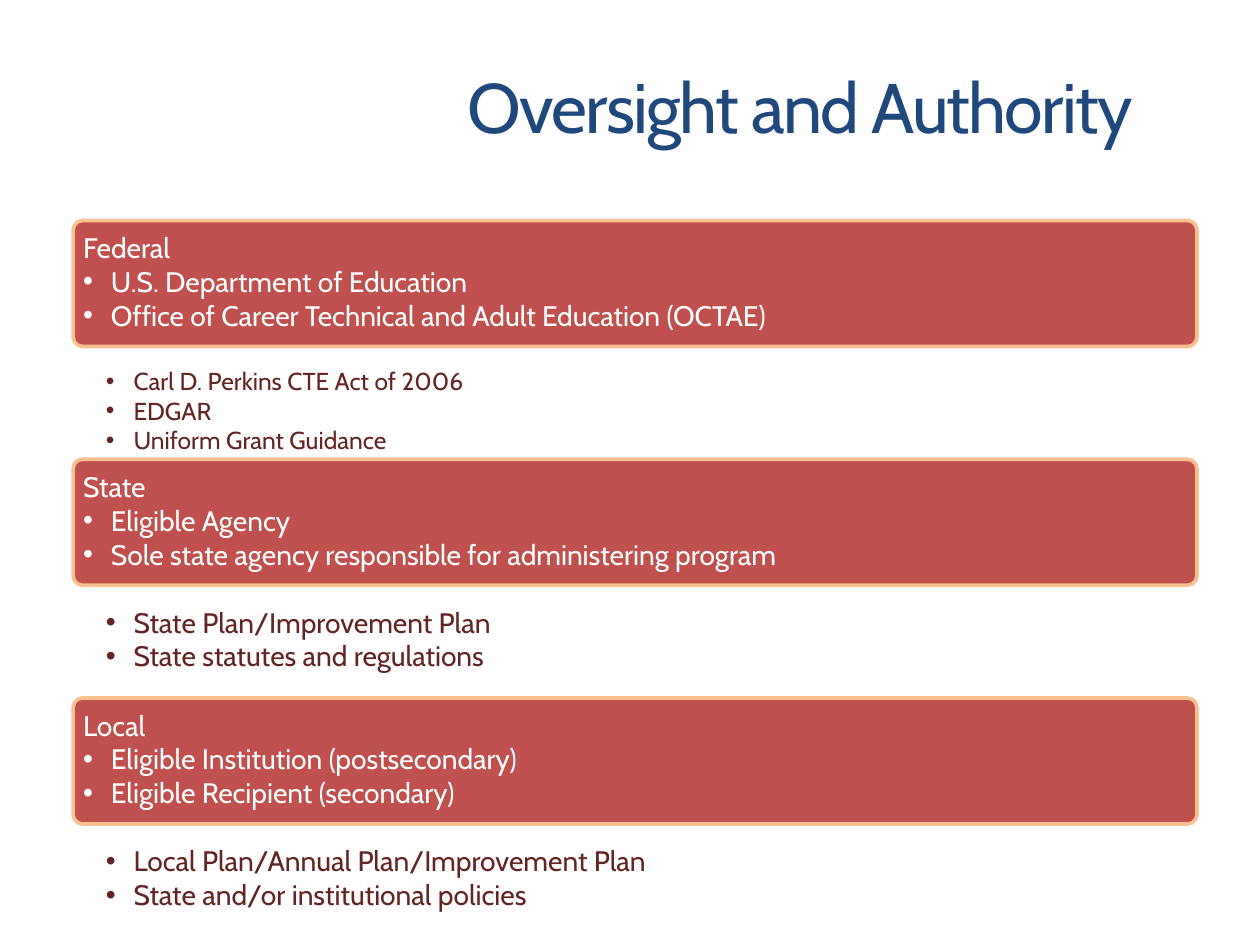
from dataclasses import dataclass

from lxml.etree import SubElement
from pptx import Presentation
from pptx.dml.color import RGBColor as Color
from pptx.enum.shapes import MSO_SHAPE as Preset
from pptx.enum.text import MSO_ANCHOR as Anchor, MSO_AUTO_SIZE as AutoSize, PP_ALIGN as Align
from pptx.oxml.ns import qn
from pptx.slide import Slide
from pptx.util import Inches, Pt

FONT = "Cabin"
COLORS = {
    "title": "1F497D",
    "band": "C0504D",
    "border": "FAC090",
    "heading": "FFFFFF",
    "detail": "632523",
}
FIRST_TOP = 1.75
PITCH = 1.895
BODY_SIZE = 16.1
DETAIL_GAP = 19.5


@dataclass
class Level:
    name: str
    bodies: list[str]
    rules: list[str]
    height: float = 1.73
    rule_size: float = BODY_SIZE


LEVELS = [
    Level(
        "Federal",
        ["U.S. Department of Education", "Office of Career Technical and Adult Education (OCTAE)"],
        ["Carl D. Perkins CTE Act of 2006", "EDGAR", "Uniform Grant Guidance"],
        height=1.89,
        rule_size=14,
    ),
    Level(
        "State",
        ["Eligible Agency", "Sole state agency responsible for administering program"],
        ["State Plan/Improvement Plan", "State statutes and regulations"],
    ),
    Level(
        "Local",
        ["Eligible Institution (postsecondary)", "Eligible Recipient (secondary)"],
        ["Local Plan/Annual Plan/Improvement Plan", "State and/or institutional policies"],
    ),
]


def color(name: str) -> Color:
    return Color.from_string(COLORS[name])


def style(para, size: float, color_name: str) -> None:
    para.font.name = FONT
    para.font.size = Pt(size)
    para.font.color.rgb = color(color_name)


def add_bullet(para, indent: float, color_name: str) -> None:
    properties = para._p.get_or_add_pPr()
    properties.set("marL", str(Inches(indent)))
    properties.set("indent", str(-Inches(0.22)))
    bullet_color = SubElement(properties, qn("a:buClr"))
    SubElement(bullet_color, qn("a:srgbClr"), val=COLORS[color_name])
    SubElement(properties, qn("a:buFont"), typeface="Arial")
    SubElement(properties, qn("a:buChar"), char="•")


def add_item(frame, text: str, indent: float, size: float, color_name: str):
    para = frame.add_paragraph()
    para.text = text
    add_bullet(para, indent, color_name)
    style(para, size, color_name)
    return para


def add_title(page: Slide, text: str) -> None:
    title = page.shapes.title
    title.left, title.top = Inches(2.92), Inches(0.04)
    title.width, title.height = Inches(6.86), Inches(1.6)
    frame = title.text_frame
    frame.vertical_anchor = Anchor.MIDDLE
    para = frame.paragraphs[0]
    para.alignment = Align.CENTER
    span = para.add_run()
    span.text = text
    span._r.get_or_add_rPr().set("spc", "-100")
    style(para, 40, "title")


def add_band(page: Slide, top: float) -> None:
    band = page.shapes.add_shape(
        Preset.ROUNDED_RECTANGLE, Inches(0.58), Inches(top), Inches(8.92), Inches(1)
    )
    band.adjustments[0] = 0.075
    band.shadow.inherit = False
    band.fill.solid()
    band.fill.fore_color.rgb = color("band")
    band.line.color.rgb = color("border")
    band.line.width = Pt(2.08)


def add_level(page: Slide, level: Level, top: float) -> None:
    add_band(page, top)
    box = page.shapes.add_textbox(
        Inches(0.61), Inches(top + 0.03), Inches(8.95), Inches(level.height)
    )
    frame = box.text_frame
    frame.word_wrap = True
    frame.auto_size = AutoSize.SHAPE_TO_FIT_TEXT
    frame.margin_left = frame.margin_right = Inches(0.05)
    frame.margin_top = frame.margin_bottom = Inches(0.05)
    heading = frame.paragraphs[0]
    heading.text = level.name
    style(heading, BODY_SIZE, "heading")
    for body in level.bodies:
        add_item(frame, body, 0.22, BODY_SIZE, "heading")
    for index, rule in enumerate(level.rules):
        para = add_item(frame, rule, 0.4, level.rule_size, "detail")
        if index == 0:
            para.space_before = Pt(DETAIL_GAP)


def main() -> None:
    deck = Presentation()
    deck.slide_width, deck.slide_height = Inches(10), Inches(7.5)
    page = deck.slides.add_slide(deck.slide_layouts[5])
    add_title(page, "Oversight and Authority")
    for index, level in enumerate(LEVELS):
        add_level(page, level, FIRST_TOP + index * PITCH)
    deck.save("out.pptx")


if __name__ == "__main__":
    main()
